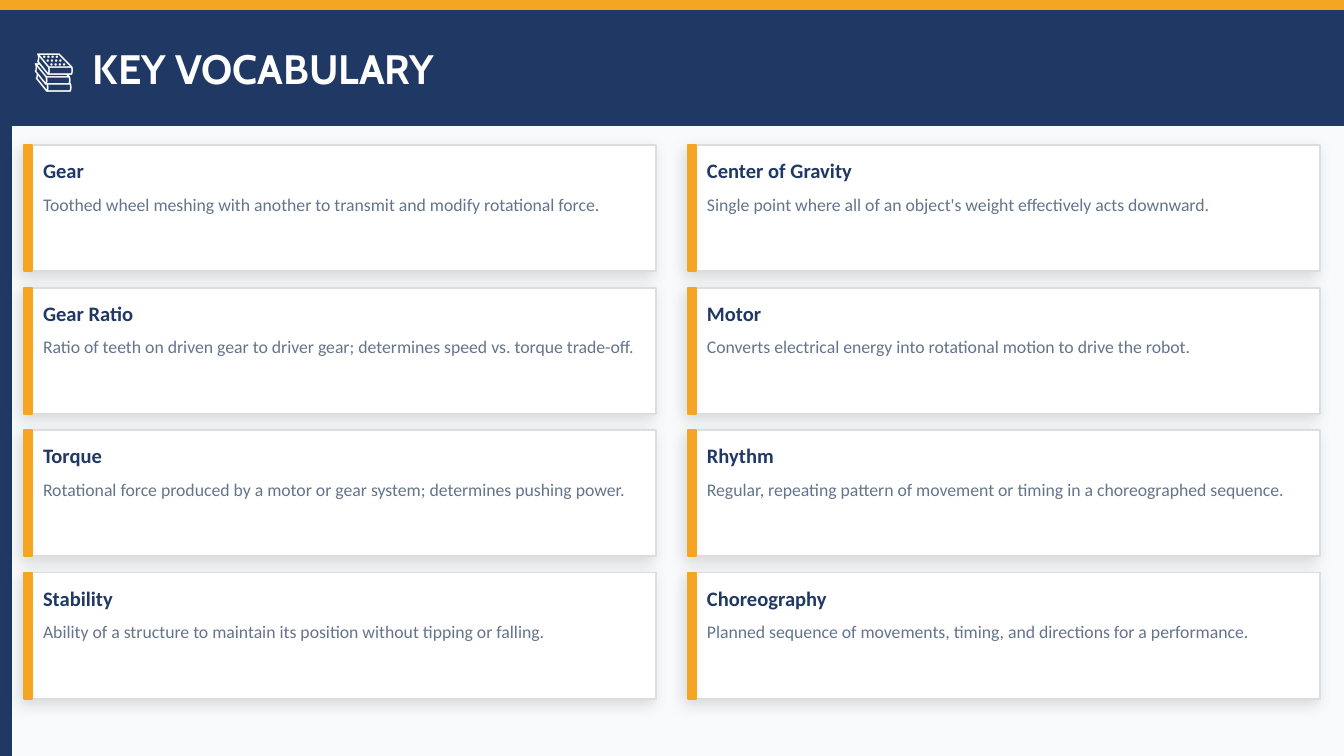
"""Build the Key Vocabulary slide: a title band above a grid of term cards."""
from lxml import etree
from pptx import Presentation
from pptx import util as u
from pptx.dml.color import RGBColor
from pptx.enum import shapes, text
from pptx.oxml import ns

PX = 4572
NAVY, GOLD, WHITE = "1F3864", "F4A522", "FFFFFF"
GREY, SLATE, PALE = "DDDDDD", "64748B", "F8FAFC"

COLUMNS = [
    [
        ("Gear", "Toothed wheel meshing with another to transmit and modify rotational force."),
        ("Gear Ratio", "Ratio of teeth on driven gear to driver gear; determines speed vs. torque trade-off."),
        ("Torque", "Rotational force produced by a motor or gear system; determines pushing power."),
        ("Stability", "Ability of a structure to maintain its position without tipping or falling."),
    ],
    [
        ("Center of Gravity", "Single point where all of an object's weight effectively acts downward."),
        ("Motor", "Converts electrical energy into rotational motion to drive the robot."),
        ("Rhythm", "Regular, repeating pattern of movement or timing in a choreographed sequence."),
        ("Choreography", "Planned sequence of movements, timing, and directions for a performance."),
    ],
]


def px(n):
    return u.Emu(n * PX)


def paint(color_fill, color):
    color_fill.solid()
    color_fill.fore_color.rgb = RGBColor.from_string(color)


def sub(parent, tag, **attrs):
    return etree.SubElement(parent, ns.qn(tag), {k: str(v) for k, v in attrs.items()})


def write(sp, words, size, color, font="Calibri", bold=False, anchor=text.MSO_ANCHOR.TOP, tab=None):
    tf = sp.text_frame
    tf.word_wrap = True
    tf.auto_size = text.MSO_AUTO_SIZE.NONE
    tf.vertical_anchor = anchor
    tf.margin_left = tf.margin_right = tf.margin_top = tf.margin_bottom = 0
    p = tf.paragraphs[0]
    p.alignment = text.PP_ALIGN.LEFT
    if tab:
        tabs = sub(p._p.get_or_add_pPr(), "a:tabLst")
        sub(tabs, "a:tab", pos=px(tab), algn="l")
    r = p.add_run()
    r.text = words
    r.font.name, r.font.size, r.font.bold = font, u.Pt(size), bold
    paint(r.font.fill, color)


class Deck:
    def __init__(self, width, height):
        self.prs = Presentation()
        self.prs.slide_width, self.prs.slide_height = px(width), px(height)
        self.s = self.prs.slides.add_slide(self.prs.slide_layouts[5])
        paint(self.s.background.fill, PALE)

    def rect(self, x, y, w, h, fill, line=None, shadow=False):
        sp = self.s.shapes.add_shape(shapes.MSO_SHAPE.RECTANGLE, px(x), px(y), px(w), px(h))
        sp.shadow.inherit = False
        paint(sp.fill, fill)
        paint(sp.line.fill, line or fill)
        sp.line.width = u.Pt(1)
        if shadow:
            effects = sp._element.spPr.find(ns.qn("a:effectLst"))
            outer = sub(effects, "a:outerShdw", blurRad=u.Pt(8), dist=u.Pt(3),
                        dir=135 * 60000, algn="bl", rotWithShape=0)
            sub(sub(outer, "a:srgbClr", val="000000"), "a:alpha", val=12000)

    def title(self, x, y, w, h, words, **fmt):
        sp = self.s.shapes.title
        sp.left, sp.top, sp.width, sp.height = px(x), px(y), px(w), px(h)
        self.s.shapes._spTree.append(sp._element)
        write(sp, words, **fmt)

    def label(self, x, y, w, h, words, **fmt):
        write(self.s.shapes.add_textbox(px(x), px(y), px(w), px(h)), words, **fmt)

    def card(self, x, y, term, meaning):
        self.rect(x, y, 940, 188, WHITE, line=GREY, shadow=True)
        self.rect(x, y, 12, 188, GOLD)
        self.label(x + 28, y + 8, 896, 60, term, size=11, color=NAVY, bold=True,
                   anchor=text.MSO_ANCHOR.MIDDLE)
        self.label(x + 28, y + 72, 896, 104, meaning, size=9.5, color=SLATE)


def main():
    deck = Deck(2000, 1125)
    deck.rect(0, 0, 2000, 16, GOLD)
    deck.rect(0, 16, 16, 1109, NAVY)
    deck.rect(16, 16, 1984, 170, NAVY)
    deck.title(50, 16, 1900, 170, "📚\tKEY VOCABULARY", size=22, color=WHITE, font="Cabin",
               bold=True, anchor=text.MSO_ANCHOR.MIDDLE, tab=88)
    for col, cards in enumerate(COLUMNS):
        for row, (term, meaning) in enumerate(cards):
            deck.card(36 + 988 * col, 216 + 212 * row, term, meaning)
    deck.prs.save("out.pptx")


if __name__ == "__main__":
    main()
